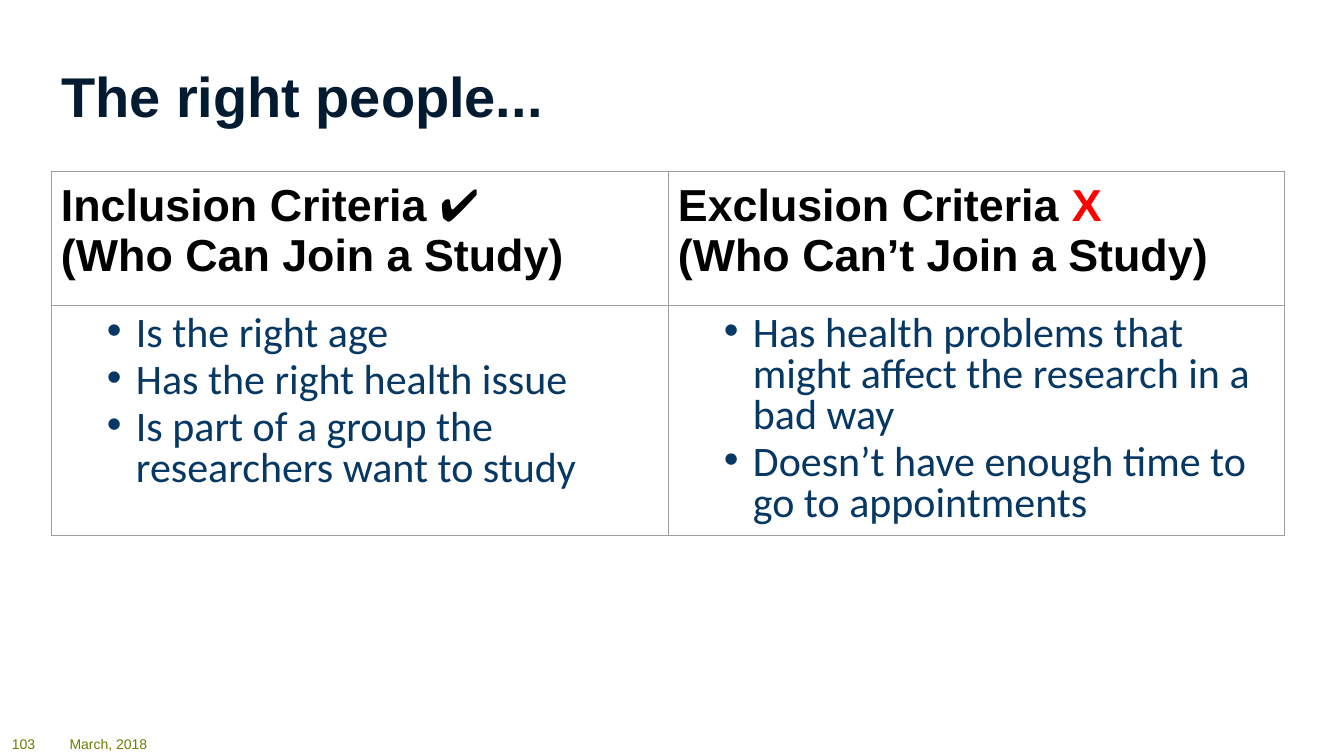
"""Build the study criteria slide with its two-column table."""
from dataclasses import dataclass

import pptx
import pptx.dml.color
import pptx.enum.text
import pptx.oxml
import pptx.oxml.ns
import pptx.util

EMU_PER_PX = 12192000 / 1344
COLOURS = {
    "title": "031B31",
    "footer": "687F00",
    "heading": "000000",
    "cross": "FF0000",
    "list": "073763",
    "border": "9E9E9E",
}
ALIGN = pptx.enum.text.PP_ALIGN
ANCHOR = pptx.enum.text.MSO_ANCHOR


@dataclass(frozen=True)
class Footer:
    text: str
    left: int
    width: int


@dataclass(frozen=True)
class Criteria:
    heading: str
    mark: str
    mark_colour: str
    mark_bold: bool
    subtitle: str
    points: tuple[str, ...]


FOOTERS = (Footer("103", 0, 45), Footer("March, 2018", 47, 110))
CRITERIA = (
    Criteria(
        "Inclusion Criteria", " ✔️", "heading", False, "(Who Can Join a Study)",
        (
            "Is the right age",
            "Has the right health issue",
            "Is part of a group the researchers want to study",
        ),
    ),
    Criteria(
        "Exclusion Criteria ", "X", "cross", True, "(Who Can’t Join a Study)",
        (
            "Has health problems that might affect the research in a bad way",
            "Doesn’t have enough time to go to appointments",
        ),
    ),
)


def px(count: int) -> pptx.util.Emu:
    return pptx.util.Emu(round(count * EMU_PER_PX))


def style_span(span, size: int, colour: str, bold: bool = False, font: str = "Arial") -> None:
    span.font.name = font
    span.font.size = pptx.util.Pt(size)
    span.font.bold = bold
    span.font.color.rgb = pptx.dml.color.RGBColor.from_string(COLOURS[colour])


def add_xml(parent, content: str, position: int) -> None:
    tag, rest = content.split(" ", 1)
    namespace = pptx.oxml.ns.nsdecls("a")
    parent.insert(position, pptx.oxml.parse_xml(f"<a:{tag} {namespace} {rest}"))


def draw_title(page) -> None:
    title = page.shapes.title
    title.left, title.top, title.width, title.height = px(51), px(4), px(1077), px(130)
    frame = title.text_frame
    frame.text = "The right people..."
    frame.vertical_anchor = ANCHOR.BOTTOM
    frame.auto_size = pptx.enum.text.MSO_AUTO_SIZE.NONE
    para = frame.paragraphs[0]
    para.alignment = ALIGN.LEFT
    style_span(para.runs[0], 40, "title", True)


def draw_footer(page, footer: Footer) -> None:
    box = page.shapes.add_textbox(px(footer.left), px(731), px(footer.width), px(25))
    frame = box.text_frame
    frame.word_wrap = True
    frame.vertical_anchor = ANCHOR.MIDDLE
    frame.text = footer.text
    para = frame.paragraphs[0]
    para.alignment = ALIGN.RIGHT
    style_span(para.runs[0], 10, "footer")


def prepare_cell(cell) -> None:
    cell.margin_left = cell.margin_right = px(10)
    cell.margin_top = cell.margin_bottom = px(10)
    cell.vertical_anchor = ANCHOR.TOP
    cell.fill.background()
    properties = cell._tc.get_or_add_tcPr()
    width = pptx.util.Pt(0.75)
    for position, side in enumerate("LRTB"):
        add_xml(
            properties,
            f'ln{side} w="{width}"><a:solidFill><a:srgbClr val="{COLOURS["border"]}"/>'
            f"</a:solidFill></a:ln{side}>",
            position,
        )


def fill_heading(cell, criteria: Criteria) -> None:
    frame = cell.text_frame
    frame.text = f"{criteria.heading}\n{criteria.subtitle}"
    for para in frame.paragraphs:
        style_span(para.runs[0], 32, "heading", True)
    mark = frame.paragraphs[0].add_run()
    mark.text = criteria.mark
    style_span(mark, 32, criteria.mark_colour, criteria.mark_bold)


def fill_points(cell, points: tuple[str, ...]) -> None:
    frame = cell.text_frame
    frame.text = "\n".join(points)
    for para in frame.paragraphs:
        para.level = 2
        para.line_spacing = 0.8
        para.space_before = pptx.util.Pt(4)
        style_span(para.runs[0], 30, "list", font="Calibri")
        properties = para._p.get_or_add_pPr()
        properties.set("marL", str(px(75)))
        properties.set("indent", str(px(-29)))
        for bullet in (
            f'buClr ><a:srgbClr val="{COLOURS["list"]}"/></a:buClr>',
            'buFont typeface="Arial"/>',
            'buChar char="•"/>',
        ):
            add_xml(properties, bullet, len(properties))


def draw_table(page) -> None:
    frame = page.shapes.add_table(2, len(CRITERIA), px(51), px(171), px(1234), px(365))
    table = frame.table
    table.first_row = False
    table.horz_banding = False
    for row, height in zip(table.rows, (134, 231)):
        row.height = px(height)
    for index, criteria in enumerate(CRITERIA):
        table.columns[index].width = px(617)
        fill_heading(table.cell(0, index), criteria)
        fill_points(table.cell(1, index), criteria.points)
    for cell in table.iter_cells():
        prepare_cell(cell)


def main() -> None:
    deck = pptx.Presentation()
    deck.slide_width, deck.slide_height = px(1344), px(756)
    page = deck.slides.add_slide(deck.slide_layouts[5])
    draw_title(page)
    for footer in FOOTERS:
        draw_footer(page, footer)
    draw_table(page)
    deck.save("out.pptx")


if __name__ == "__main__":
    main()
